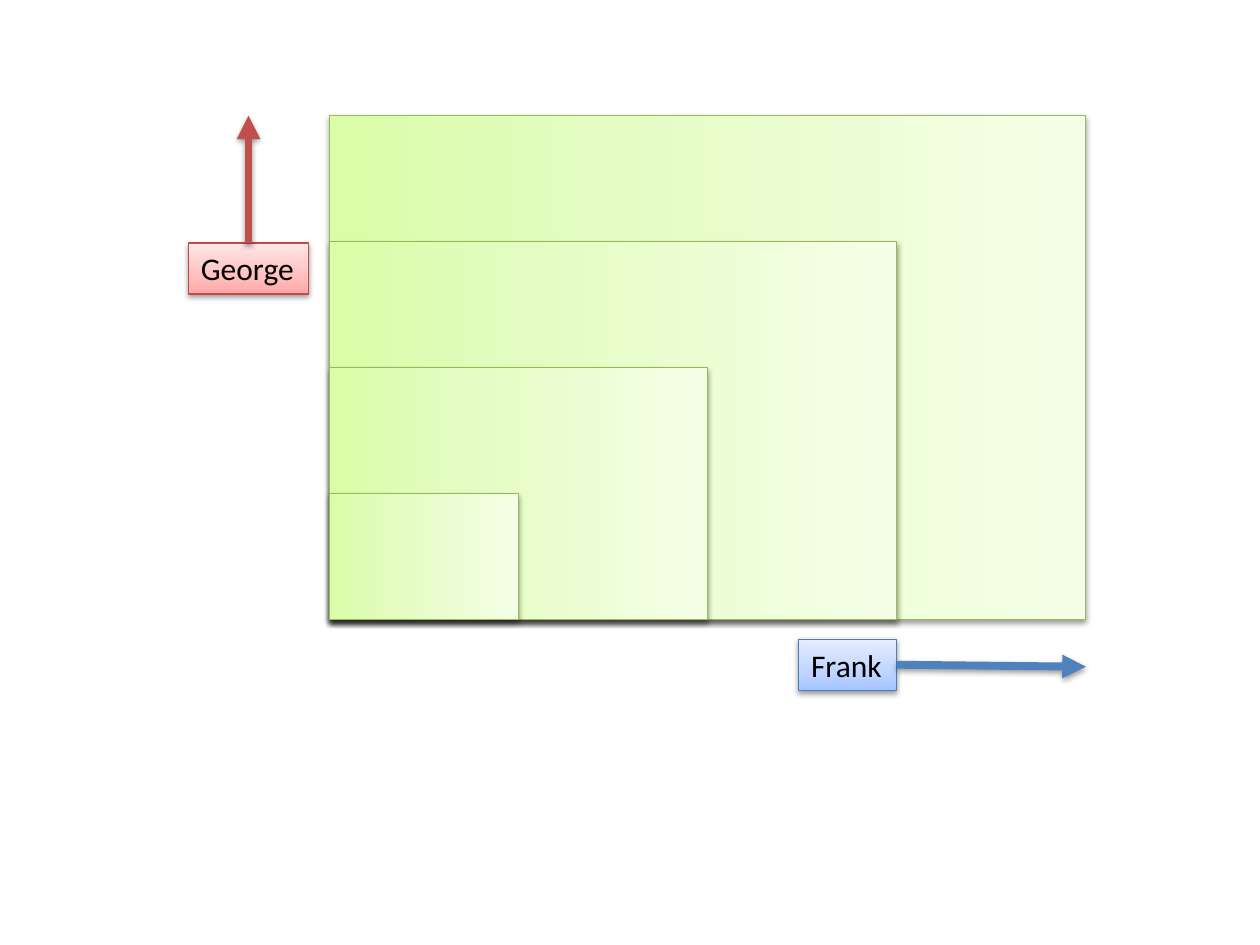
from lxml.etree import SubElement
from pptx import Presentation
from pptx.dml.color import RGBColor
from pptx.enum.shapes import MSO_CONNECTOR as Connector, MSO_SHAPE as Preset
from pptx.enum.text import MSO_ANCHOR as Anchor, MSO_AUTO_SIZE as AutoSize, PP_ALIGN as Align
from pptx.oxml import parse_xml
from pptx.oxml.ns import nsdecls, qn
from pptx.util import Cm, Pt

COLOURS = {
    "black": "000000",
    "red line": "BF4C48", "red arrow": "C0504D",
    "blue line": "4B7EBC", "blue arrow": "4F81BD",
    "green line": "98B955",
}
GRADIENTS = {
    "red": ("FFA6A5", "FFC0BF", "FFE7E7"),
    "blue": ("A4C4FF", "BFD4FF", "E6EEFF"),
    "green": ("DAFDA7", "E4FCC2", "F5FFE7"),
}
STOPS = (0, 35, 100)
LABELS = [
    ("George", "red", (3.8, 4.9, 2.42, 1.03)),
    ("Frank", "blue", (16.1, 12.89, 1.98, 1.03)),
]
ARROWS = [
    ("blue", (18.08, 13.4), (21.89, 13.44)),
    ("red", (5.01, 4.9), (5.01, 2.33)),
]
LEFT, BOTTOM = 6.65, 12.49
STEP_WIDTH, STEP_HEIGHT = 3.81, 2.54
STEPS = (4, 3, 2, 1)


def add_shadow(item):
    """Give a shape or connector the soft drop shadow."""
    item._element.spPr.append(parse_xml(
        f'<a:effectLst {nsdecls("a")}><a:outerShdw blurRad="40000" dist="20000" '
        f'dir="5400000" rotWithShape="0"><a:srgbClr val="{COLOURS["black"]}">'
        '<a:alpha val="38000"/></a:srgbClr></a:outerShdw></a:effectLst>'))


def add_box(shapes, hue, left, top, width, height):
    """Add a rectangle with a three-stop gradient, thin line and shadow."""
    box = shapes.add_shape(Preset.RECTANGLE, Cm(left), Cm(top), Cm(width), Cm(height))
    box.fill.background()
    properties = box._element.spPr
    stops = "".join(
        f'<a:gs pos="{stop * 1000}"><a:srgbClr val="{colour}"/></a:gs>'
        for stop, colour in zip(STOPS, GRADIENTS[hue]))
    properties.replace(properties.find(qn("a:noFill")), parse_xml(
        f'<a:gradFill {nsdecls("a")} rotWithShape="1"><a:gsLst>{stops}</a:gsLst>'
        '<a:lin ang="16200000" scaled="1"/></a:gradFill>'))
    box.line.color.rgb = RGBColor.from_string(COLOURS[f"{hue} line"])
    box.line.width = Pt(0.75)
    add_shadow(box)
    return box


def add_label(shapes, text, hue, place):
    """Add a gradient box that holds a name."""
    frame = add_box(shapes, hue, *place).text_frame
    frame.word_wrap = False
    frame.auto_size = AutoSize.SHAPE_TO_FIT_TEXT
    frame.vertical_anchor = Anchor.TOP
    para = frame.paragraphs[0]
    para.text = text
    para.alignment = Align.LEFT
    para.font.name = "Calibri"
    para.font.size = Pt(18)
    para.font.color.rgb = RGBColor.from_string(COLOURS["black"])


def add_arrow(shapes, hue, start, end):
    """Add a thick arrow from start to end."""
    arrow = shapes.add_connector(Connector.STRAIGHT, *map(Cm, start + end))
    arrow.line.color.rgb = RGBColor.from_string(COLOURS[f"{hue} arrow"])
    arrow.line.width = Pt(4.5)
    SubElement(arrow.line._get_or_add_ln(), qn("a:tailEnd"), type="triangle")
    add_shadow(arrow)


def add_step(shapes, count):
    """Add a quarter-turned rectangle that grows from the lower left corner."""
    across, up = count * STEP_WIDTH, count * STEP_HEIGHT
    middle_x, middle_y = LEFT + across / 2, BOTTOM - up / 2
    box = add_box(shapes, "green", middle_x - up / 2, middle_y - across / 2, up, across)
    box.rotation = 90
    box._element.spPr.xfrm.set("flipH", "1")


def main():
    """Build the slide and save it."""
    deck = Presentation()
    deck.slide_width, deck.slide_height = Cm(25.4), Cm(19.05)
    page = deck.slides.add_slide(deck.slide_layouts[6])
    shapes = page.shapes.add_group_shape().shapes
    for label in LABELS:
        add_label(shapes, *label)
    for arrow in ARROWS:
        add_arrow(shapes, *arrow)
    for count in STEPS:
        add_step(shapes, count)
    deck.save("out.pptx")


if __name__ == "__main__":
    main()
